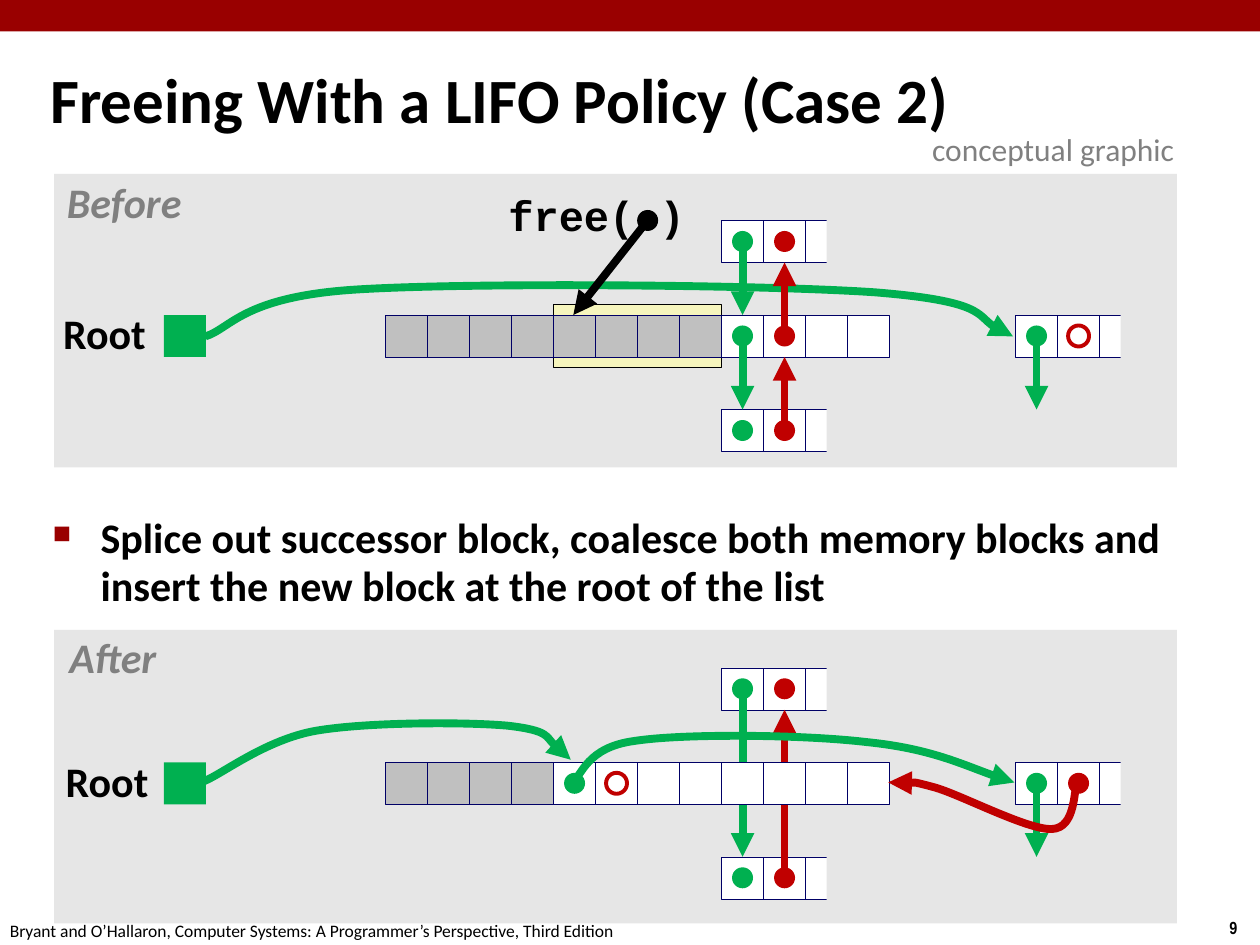
"""Build the slide on freeing a block with a LIFO policy."""
from lxml import etree
from pptx import Presentation
from pptx import util as u
from pptx.dml.color import RGBColor
from pptx.enum import shapes, text
from pptx.oxml import ns

BLACK = RGBColor(0x00, 0x00, 0x00)
WHITE = RGBColor(0xFF, 0xFF, 0xFF)
CRIMSON = RGBColor(0x99, 0x00, 0x00)
PANEL = RGBColor(0xE6, 0xE6, 0xE6)
USED = RGBColor(0xC0, 0xC0, 0xC0)
HIGHLIGHT = RGBColor(0xF6, 0xF5, 0xBD)
BORDER = RGBColor(0x00, 0x00, 0x66)
NEXT = RGBColor(0x00, 0xB0, 0x50)
PREV = RGBColor(0xC0, 0x00, 0x00)
GREY = RGBColor(0x80, 0x80, 0x80)

CELL = 1 / 3
HEAP_LEFT = 3.06
LIST_STEP = 0.75
BEFORE, AFTER = 2.5, 6.05
RECT, OVAL = shapes.MSO_SHAPE.RECTANGLE, shapes.MSO_SHAPE.OVAL
LABEL = {"size": u.Pt(24), "bold": True}
CAPTION = {**LABEL, "italic": True, "color": GREY}


def col(index):
    """Return the left edge of a heap column."""
    return HEAP_LEFT + index * CELL


def centre(index, top):
    """Return the centre of the cell in a column whose top is given."""
    return col(index + 0.5), top + CELL / 2


def add_box(slide, left, top, width, height, fill=None, border=None, weight=0.25, kind=RECT):
    """Add a flat preset shape."""
    box = slide.shapes.add_shape(kind, *map(u.Inches, (left, top, width, height)))
    box.shadow.inherit = False
    if fill is None:
        box.fill.background()
    else:
        box.fill.solid()
        box.fill.fore_color.rgb = fill
    if border is None:
        box.line.fill.background()
    else:
        box.line.color.rgb = border
        box.line.width = u.Pt(weight)


def add_cells(slide, first, top, fills):
    """Add a run of heap words from a column."""
    for index, fill in enumerate(fills, first):
        add_box(slide, col(index), top, CELL, CELL, fill, BORDER)


def add_cut_block(slide, first, top):
    """Add a list block whose right end fades into the panel."""
    add_cells(slide, first, top, [WHITE] * 3)
    add_box(slide, col(first + 2.5), top - CELL / 4, CELL, CELL * 1.5, PANEL)


def add_dot(slide, point, color, hollow=False):
    """Add a pointer dot centred on a point."""
    x, y = point
    size = CELL / 2
    look = {"border": color, "weight": 2.25} if hollow else {"fill": color}
    add_box(slide, x - size / 2, y - size / 2, size, size, kind=OVAL, **look)


def style_arrow(arrow, color):
    """Give a line its colour, weight and arrowhead."""
    arrow.line.color.rgb = color
    arrow.line.width = u.Pt(4.5)
    etree.SubElement(arrow.line._get_or_add_ln(), ns.qn("a:tailEnd"), type="triangle")


def add_arrow(slide, start, end, color):
    """Add a straight pointer."""
    ends = map(u.Inches, (*start, *end))
    arrow = slide.shapes.add_connector(shapes.MSO_CONNECTOR.STRAIGHT, *ends)
    style_arrow(arrow, color)
    etree.SubElement(arrow._element.spPr, ns.qn("a:effectLst"))


def add_curve(slide, points, color):
    """Add a curved pointer from a start and triples of Bezier points."""
    start, *bends = [(u.Inches(x), u.Inches(y)) for x, y in points]
    builder = slide.shapes.build_freeform(*start)
    builder.add_line_segments(bends, close=False)
    curve = builder.convert_to_shape()
    curve.shadow.inherit = False
    curve.fill.background()
    style_arrow(curve, color)
    route = next(curve._element.iter(ns.qn("a:path")))
    stops = route.findall(ns.qn("a:lnTo"))
    for first in range(0, len(stops), 3):
        bend = etree.SubElement(route, ns.qn("a:cubicBezTo"))
        for stop in stops[first:first + 3]:
            bend.append(stop[0])
            route.remove(stop)


def write(holder, words, font, wrap=False, inset=(0.1, 0.05), **paragraph_format):
    """Set one formatted paragraph in a text frame."""
    frame = holder.text_frame
    frame.word_wrap = wrap
    frame.auto_size = text.MSO_AUTO_SIZE.NONE
    frame.margin_left = frame.margin_right = u.Inches(inset[0])
    frame.margin_top = frame.margin_bottom = u.Inches(inset[1])
    paragraph = frame.paragraphs[0]
    for name, value in paragraph_format.items():
        setattr(paragraph, name, value)
    run = paragraph.add_run()
    run.text = words
    color = font.get("color", BLACK)
    for name, value in {"name": "Calibri", **font}.items():
        if name != "color":
            setattr(run.font, name, value)
    run.font.color.rgb = color
    return paragraph


def add_text(slide, place, words, font, **layout):
    """Add a text box and return its paragraph."""
    holder = slide.shapes.add_textbox(*map(u.Inches, place))
    return write(holder, words, font, **layout)


def add_label(slide, place, words, font):
    """Add a centred diagram label."""
    add_text(slide, place, words, font, inset=(0.05, 0.05),
             alignment=text.PP_ALIGN.CENTER, line_spacing=0.9)


def add_title(slide, words):
    """Place and format the title."""
    title = slide.shapes.title
    title.left, title.top, title.width, title.height = map(u.Inches, (0.3, 0.39, 9.53, 0.86))
    title.text_frame.vertical_anchor = text.MSO_ANCHOR.MIDDLE
    write(title, words, {"size": u.Pt(36), "bold": True}, wrap=True,
          alignment=text.PP_ALIGN.LEFT, line_spacing=0.87)


def add_bullet(slide, place, words):
    """Add a paragraph with a square bullet."""
    paragraph = add_text(slide, place, words, LABEL, wrap=True,
                         line_spacing=0.95, space_before=u.Pt(4.8))
    props = paragraph._p.get_or_add_pPr()
    props.set("marL", str(u.Inches(0.38)))
    props.set("indent", str(-u.Inches(0.38)))
    color = etree.SubElement(props, ns.qn("a:buClr"))
    etree.SubElement(color, ns.qn("a:srgbClr"), val=str(CRIMSON))
    etree.SubElement(props, ns.qn("a:buSzPct"), val="60000")
    etree.SubElement(props, ns.qn("a:buChar"), char="■")


def add_neighbours(slide, row):
    """Add the root and the list blocks around a heap row."""
    add_box(slide, 1.3, row, CELL, CELL, NEXT)
    for top in (row - LIST_STEP, row + LIST_STEP):
        add_cut_block(slide, 8, top)
        add_dot(slide, centre(8, top), NEXT)
        add_dot(slide, centre(9, top), PREV)
    add_cut_block(slide, 15, row)
    add_dot(slide, centre(15, row), NEXT)
    add_arrow(slide, centre(15, row), (col(15.5), row + LIST_STEP), NEXT)


def add_links(slide, upper, lower):
    """Add the forward and backward links between two list blocks."""
    add_arrow(slide, centre(8, upper), (col(8.5), lower), NEXT)
    add_arrow(slide, centre(9, lower), (col(9.5), upper + CELL), PREV)


def draw_before(slide):
    """Draw the heap before the call to free."""
    add_box(slide, 0.43, 1.38, 8.91, 2.33, PANEL)
    add_box(slide, col(4), BEFORE - CELL / 4, CELL * 4, CELL * 1.5, HIGHLIGHT, BLACK, 0.75)
    add_curve(slide, [(1.63, 2.67), (1.83, 2.61), (1.92, 2.36), (2.8, 2.3), (3.69, 2.24),
                      (6.06, 2.26), (6.94, 2.32), (7.81, 2.39), (7.81, 2.6), (8.04, 2.67)], NEXT)
    add_cells(slide, 0, BEFORE, [USED] * 8 + [WHITE] * 4)
    add_neighbours(slide, BEFORE)
    add_dot(slide, centre(8, BEFORE), NEXT)
    add_dot(slide, centre(9, BEFORE), PREV)
    for upper in (BEFORE - LIST_STEP, BEFORE):
        add_links(slide, upper, upper + LIST_STEP)
    add_dot(slide, centre(16, BEFORE), PREV, hollow=True)
    add_label(slide, (3.98, 1.5, 1.51, 0.47), "free( )", {**LABEL, "name": "Courier New"})
    add_dot(slide, (5.14, 1.75), BLACK)
    add_arrow(slide, (5.14, 1.75), (4.55, BEFORE), BLACK)
    add_label(slide, (0.45, 2.44, 0.76, 0.47), "Root", LABEL)
    add_label(slide, (0.47, 1.4, 1.03, 0.47), "Before", CAPTION)


def draw_after(slide):
    """Draw the heap with the coalesced block at the root."""
    add_box(slide, 0.43, 5, 8.91, 2.33, PANEL)
    add_neighbours(slide, AFTER)
    add_links(slide, AFTER - LIST_STEP, AFTER + LIST_STEP)
    add_cells(slide, 0, AFTER, [USED] * 4 + [WHITE] * 8)
    add_dot(slide, centre(4, AFTER), NEXT)
    add_dot(slide, centre(5, AFTER), PREV, hollow=True)
    add_dot(slide, centre(16, AFTER), PREV)
    add_curve(slide, [(4.54, 6.21), (4.62, 6.16), (4.65, 5.93), (5.04, 5.88), (5.43, 5.82),
                      (6.38, 5.83), (6.88, 5.89), (7.38, 5.94), (7.81, 6.14), (8.05, 6.21)], NEXT)
    add_curve(slide, [(8.55, 6.21), (8.52, 6.27), (8.54, 6.57), (8.35, 6.58), (8.16, 6.59),
                      (7.63, 6.31), (7.42, 6.25), (7.2, 6.19), (7.13, 6.22), (7.05, 6.21)], PREV)
    add_curve(slide, [(1.62, 6.2), (1.77, 6.14), (2.11, 5.87), (2.51, 5.8), (2.92, 5.73),
                      (3.7, 5.73), (4.03, 5.76), (4.37, 5.8), (4.43, 5.97), (4.53, 6.03)], NEXT)
    add_label(slide, (0.47, 5.99, 0.76, 0.47), "Root", LABEL)
    add_label(slide, (0.49, 5.01, 0.81, 0.47), "After", CAPTION)


def main():
    """Assemble and save the slide."""
    deck = Presentation()
    deck.slide_width, deck.slide_height = u.Inches(10), u.Inches(7.5)
    slide = deck.slides.add_slide(deck.slide_layouts[5])
    add_box(slide, 0, 0, 10, 0.25, CRIMSON)
    add_text(slide, (9.66, 7.23, 0.34, 0.27), "9",
             {"name": "Arial Narrow", "size": u.Pt(10), "bold": True})
    add_text(slide, (-0.02, 7.25, 5.08, 0.27),
             "Bryant and O’Hallaron, Computer Systems: A Programmer’s Perspective, Third Edition",
             {"size": u.Pt(10)})
    add_title(slide, "Freeing With a LIFO Policy (Case 2)")
    draw_before(slide)
    add_bullet(slide, (0.32, 4.04, 9.09, 0.86), "Splice out successor block, coalesce both "
               "memory blocks and insert the new block at the root of the list")
    draw_after(slide)
    add_text(slide, (7.3, 0.98, 2.17, 0.4), "conceptual graphic",
             {"size": u.Pt(18), "color": GREY})
    deck.save("out.pptx")


if __name__ == "__main__":
    main()
